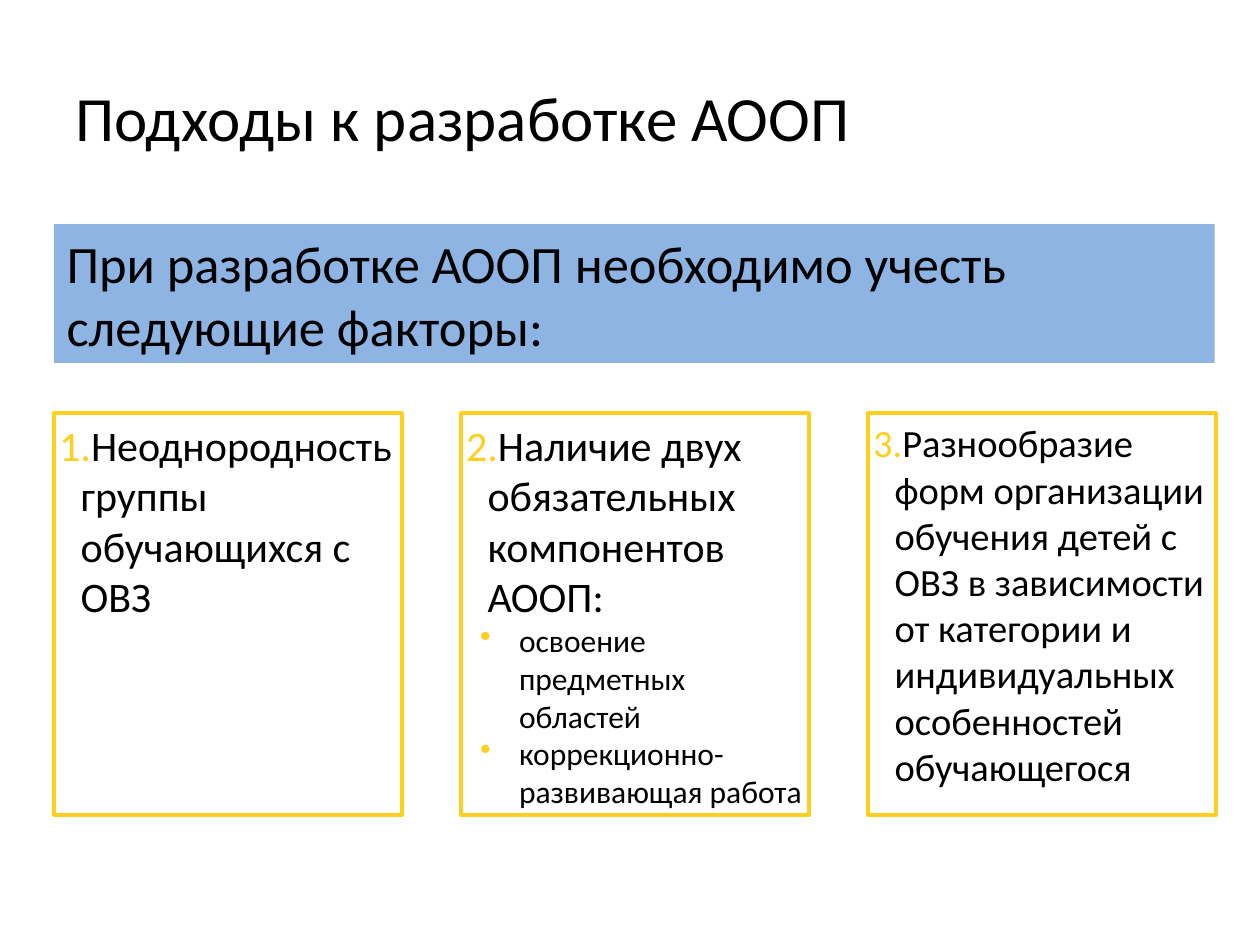
from lxml import etree
from pptx import Presentation
from pptx.dml import color
from pptx.enum import shapes, text
from pptx.oxml import ns
from pptx.util import Inches, Pt

COLORS = {"text": "000000", "banner": "8EB4E3", "accent": "FFCF20"}
FACTORS = [
    (24, "Неоднородность группы обучающихся с ОВЗ", []),
    (24, "Наличие двух обязательных компонентов АООП:",
     ["освоение предметных областей", "коррекционно-развивающая работа"]),
    (22, "Разнообразие форм организации обучения детей с ОВЗ в зависимости "
         "от категории и индивидуальных особенностей обучающегося", []),
]


def rgb(name):
    return color.RGBColor.from_string(COLORS[name])


def write(paragraph, wording, size, level=0, font="Calibri", fill="text"):
    paragraph.level = level
    paragraph.alignment = text.PP_ALIGN.LEFT
    run = paragraph.add_run()
    run.text = wording
    run.font.size = Pt(size)
    run.font.name = font
    run.font.color.rgb = rgb(fill)


def add_marker(paragraph, margin, indent, tag, **attributes):
    properties = paragraph._p.get_or_add_pPr()
    properties.set("marL", str(Inches(margin)))
    properties.set("indent", str(Inches(indent)))
    tint = etree.SubElement(properties, ns.qn("a:buClr"))
    etree.SubElement(tint, ns.qn("a:srgbClr"), val=COLORS["accent"])
    etree.SubElement(properties, ns.qn(tag), **attributes)


def add_rectangle(slide, box):
    rectangle = slide.shapes.add_shape(
        shapes.MSO_SHAPE.RECTANGLE, *map(Inches, box))
    rectangle.shadow.inherit = False
    rectangle.text_frame.word_wrap = True
    return rectangle


def add_title(slide, box, wording):
    title = slide.shapes.add_textbox(*map(Inches, box)).text_frame
    title.word_wrap = True
    title.vertical_anchor = text.MSO_ANCHOR.MIDDLE
    write(title.paragraphs[0], wording, size=36)


def add_banner(slide, box, wording):
    banner = add_rectangle(slide, box)
    banner.fill.solid()
    banner.fill.fore_color.rgb = rgb("banner")
    banner.line.fill.background()
    banner.text_frame.vertical_anchor = text.MSO_ANCHOR.MIDDLE
    write(banner.text_frame.paragraphs[0], wording, size=30)


def add_factor(slide, box, number, size, heading, components):
    card = add_rectangle(slide, box)
    card.fill.background()
    card.line.color.rgb = rgb("accent")
    card.line.width = Pt(2.25)
    frame = card.text_frame
    frame.vertical_anchor = text.MSO_ANCHOR.TOP
    frame.margin_left = frame.margin_right = Inches(0.04)
    frame.margin_top = frame.margin_bottom = Inches(0.05)

    write(frame.paragraphs[0], heading, size=size)
    add_marker(frame.paragraphs[0], 0.17, -0.28, "a:buAutoNum",
               type="arabicPeriod", startAt=str(number))
    for component in components:
        item = frame.add_paragraph()
        write(item, component, size=18, level=1)
        add_marker(item, 0.42, -0.31, "a:buChar", char="•")


def add_factors(slide, box):
    left, top, width, height = box
    card_width = 2.76
    step = (width - card_width) / (len(FACTORS) - 1)
    for index, factor in enumerate(FACTORS):
        add_factor(slide, (left + index * step, top, card_width, height),
                   index + 1, *factor)


def main():
    deck = Presentation()
    deck.slide_width, deck.slide_height = Inches(10), Inches(7.5)
    slide = deck.slides.add_slide(deck.slide_layouts[6])
    add_banner(slide, (0.43, 1.78, 9.21, 1.1),
               "При разработке АООП необходимо учесть следующие факторы:")
    add_title(slide, (0.5, 0.3, 9, 1.25), "Подходы к разработке АООП")
    add_factors(slide, (0.43, 3.28, 9.22, 3.19))
    deck.save("out.pptx")


if __name__ == "__main__":
    main()
